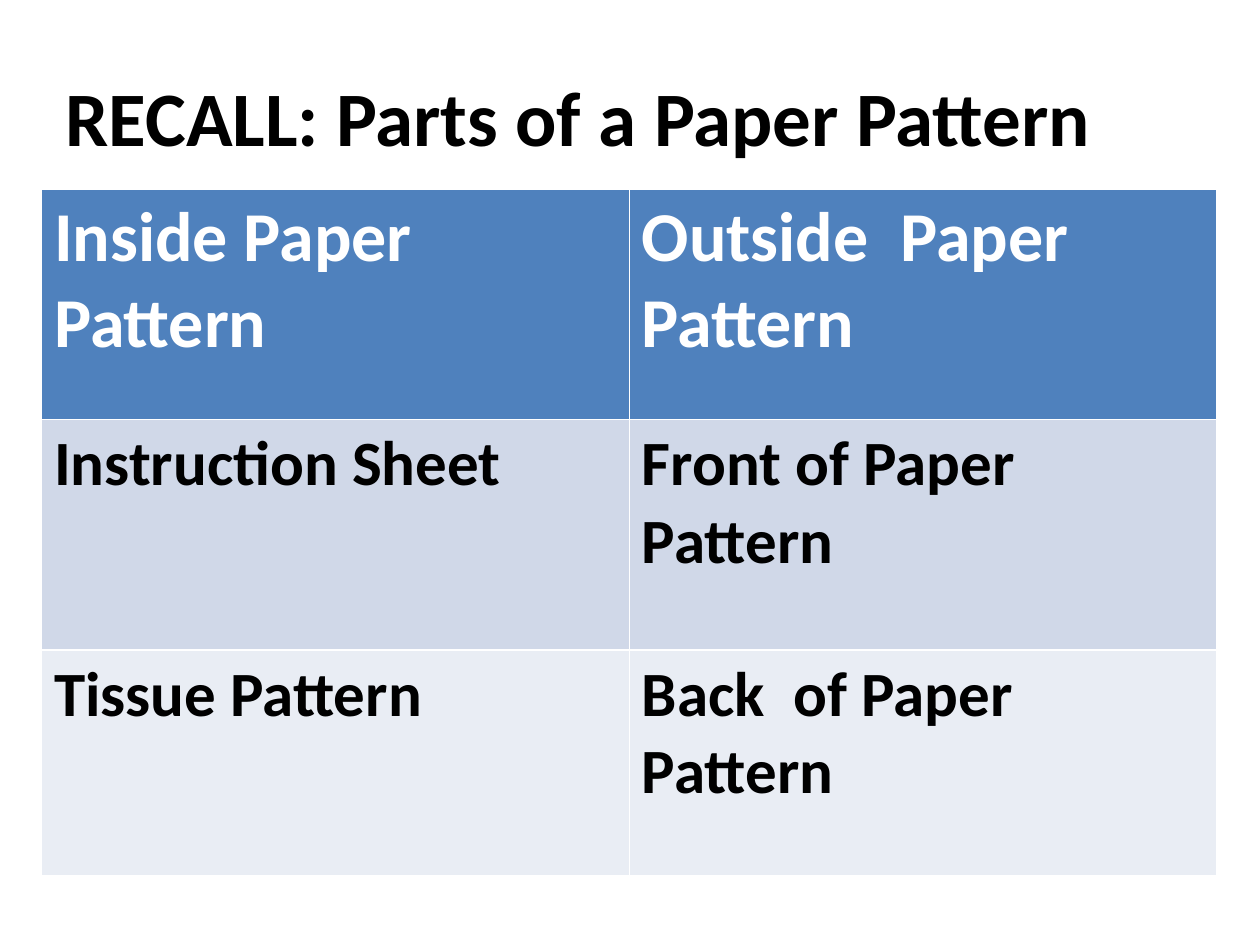
"""Build the slide recalling the parts of a paper pattern."""
from dataclasses import dataclass

from pptx import Presentation
from pptx.dml.color import RGBColor
from pptx.enum import text
from pptx.util import Inches, Pt


@dataclass(frozen=True)
class PatternRow:
    inside: str
    outside: str
    height: float
    size: int
    ink: str
    fill: str


HEADING = "RECALL: Parts of a Paper Pattern"
PATTERN_ROWS = [
    PatternRow("Inside Paper Pattern", "Outside  Paper Pattern", 1.83, 40, "FFFFFF", "4F81BD"),
    PatternRow("Instruction Sheet", "Front of Paper Pattern", 1.83, 36, "000000", "D0D8E8"),
    PatternRow("Tissue Pattern", "Back  of Paper Pattern", 1.79, 36, "000000", "E9EDF4"),
]


def color(value: str) -> RGBColor:
    return RGBColor.from_string(value)


def write(frame, wording: str, size: int, ink: str) -> None:
    frame.text = wording
    font = frame.paragraphs[0].runs[0].font
    for name, value in {"name": "Calibri", "size": Pt(size), "bold": True}.items():
        setattr(font, name, value)
    font.color.rgb = color(ink)


def add_heading(slide) -> None:
    heading = slide.shapes.title
    box = {"left": 0.42, "top": 0.5, "width": 9.08, "height": 6.33}
    for name, value in box.items():
        setattr(heading, name, Inches(value))
    frame = heading.text_frame
    write(frame, HEADING, 44, "000000")
    layout = {
        "vertical_anchor": text.MSO_ANCHOR.TOP,
        "auto_size": text.MSO_AUTO_SIZE.NONE,
        "word_wrap": True,
    }
    for name, value in layout.items():
        setattr(frame, name, value)
    frame.paragraphs[0].alignment = text.PP_ALIGN.LEFT


def add_pattern_table(slide, rows: list[PatternRow]) -> None:
    total_height = sum(row.height for row in rows)
    table = slide.shapes.add_table(
        len(rows), 2, Inches(0.33), Inches(1.5), Inches(9.33), Inches(total_height)
    ).table
    for index, row in enumerate(rows):
        table.rows[index].height = Inches(row.height)
        for column, wording in enumerate((row.inside, row.outside)):
            cell = table.cell(index, column)
            cell.fill.solid()
            cell.fill.fore_color.rgb = color(row.fill)
            write(cell.text_frame, wording, row.size, row.ink)


def main() -> None:
    deck = Presentation()
    deck.slide_width, deck.slide_height = Inches(10), Inches(7.5)
    slide = deck.slides.add_slide(deck.slide_layouts.get_by_name("Title Only"))
    add_heading(slide)
    add_pattern_table(slide, PATTERN_ROWS)
    deck.save("out.pptx")


if __name__ == "__main__":
    main()
